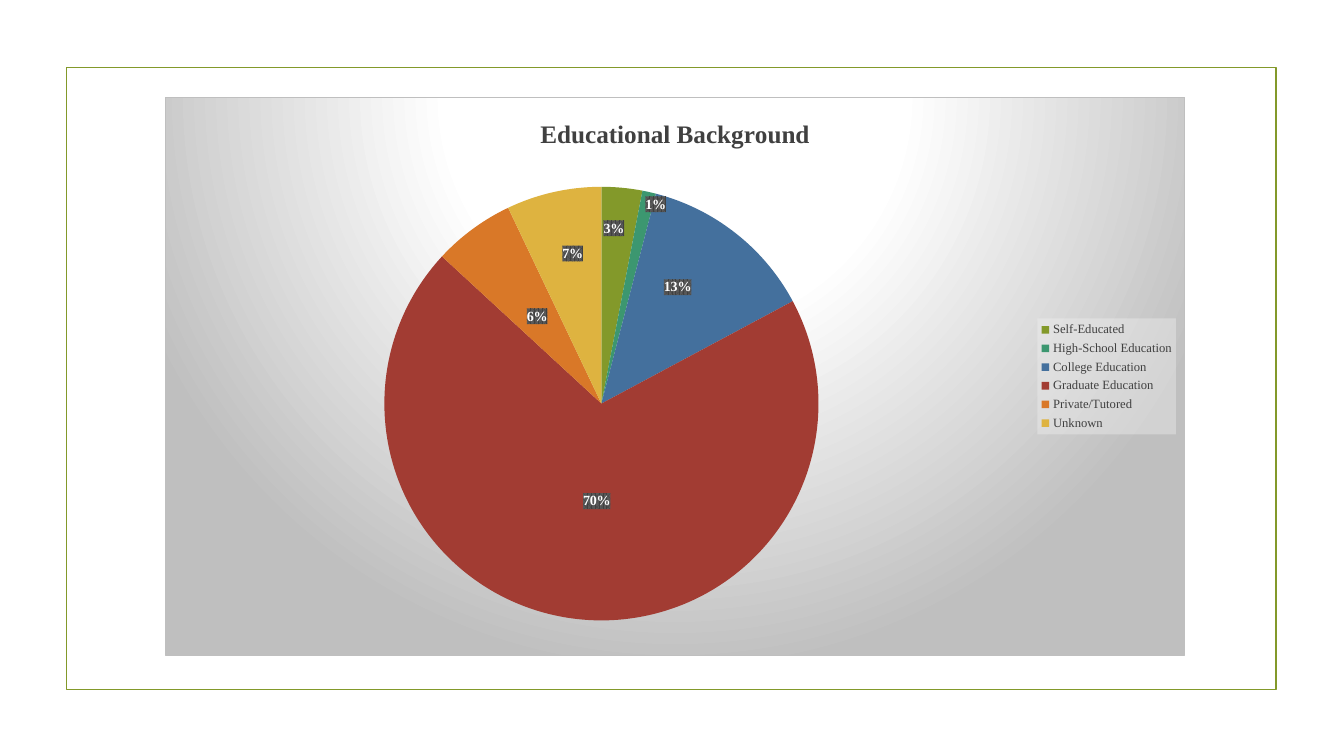
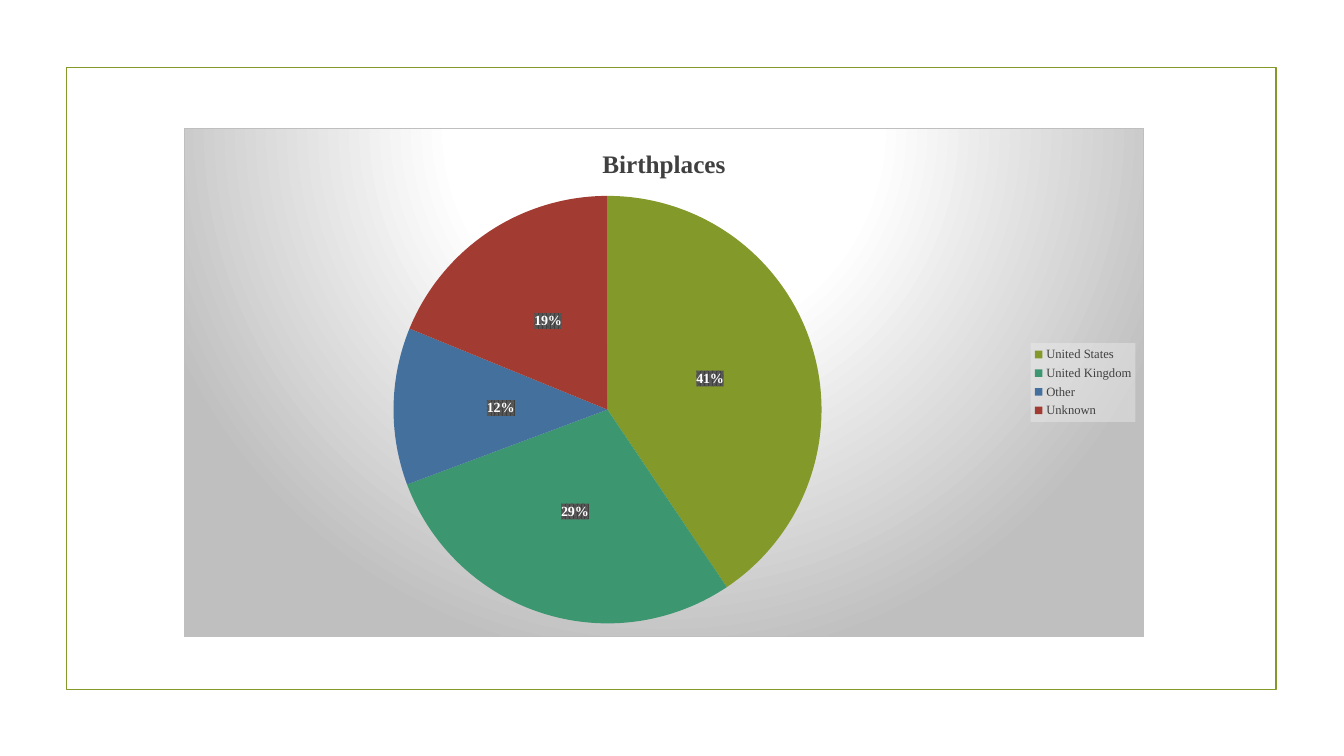
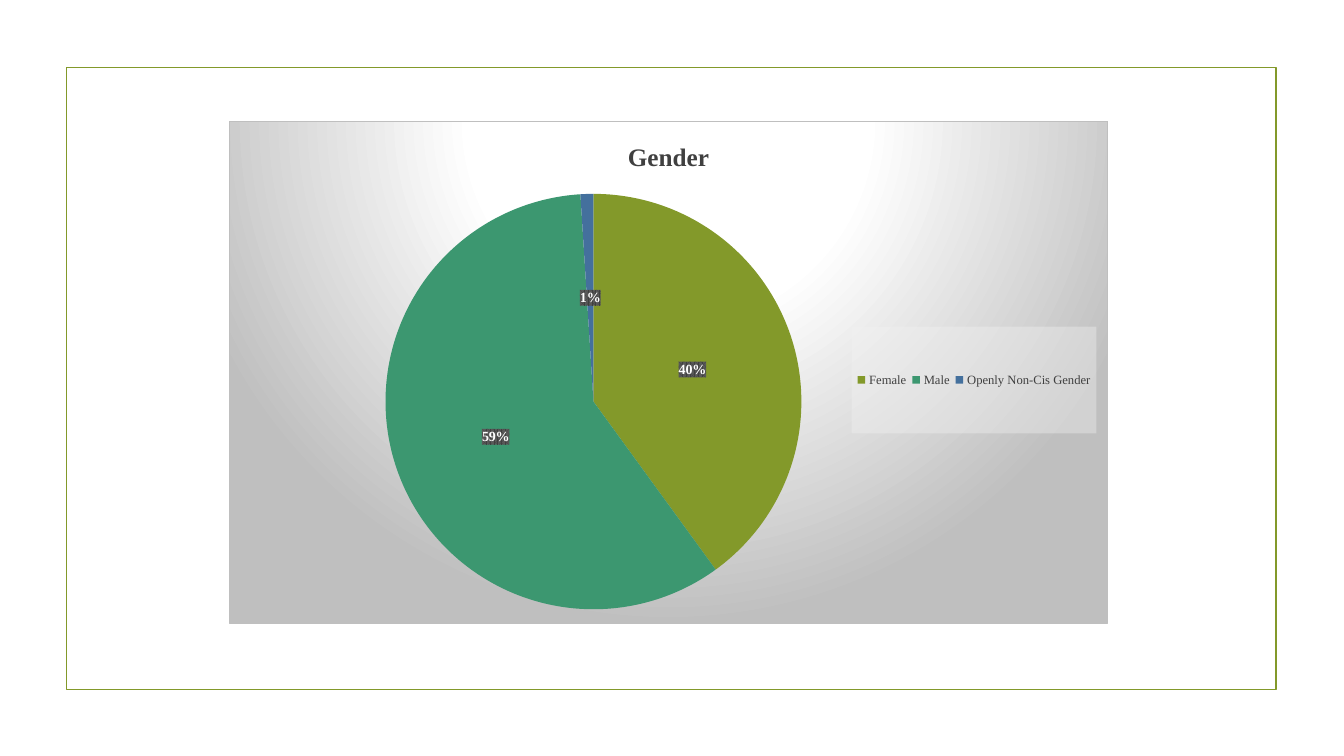
"""Build three framed slides with demographic pie charts."""
from copy import deepcopy
from dataclasses import dataclass, field

from pptx import Presentation
from pptx import util as u
from pptx.chart.chart import Chart
from pptx.chart.data import CategoryChartData
from pptx.dml.color import RGBColor
from pptx.enum import chart as charts
from pptx.enum import shapes
from pptx.oxml import parse_xml
from pptx.oxml.ns import nsdecls, qn
from pptx.slide import Slide, SlideLayout
from pptx.text.text import Font

FONT = "Times New Roman"
DARK = "404040"
WHITE = "FFFFFF"
SILVER = "BFBFBF"
PALETTE = ["83992A", "3C9770", "44709D", "A23C33", "D97828", "DEB340"]

CHART_STYLE = f"""
<a:gradFill rotWithShape="1"><a:gsLst>
<a:gs pos="0"><a:srgbClr val="{WHITE}"/></a:gs>
<a:gs pos="39000"><a:srgbClr val="{WHITE}"/></a:gs>
<a:gs pos="100000"><a:srgbClr val="{SILVER}"/></a:gs>
</a:gsLst><a:path path="circle">
<a:fillToRect l="50000" t="-80000" r="50000" b="180000"/>
</a:path></a:gradFill>
<a:ln w="9525"><a:solidFill><a:srgbClr val="{SILVER}"/></a:solidFill></a:ln>"""
LEGEND_STYLE = """
<a:solidFill><a:srgbClr val="F2F2F2"><a:alpha val="39000"/></a:srgbClr></a:solidFill>
<a:ln><a:noFill/></a:ln>"""
LABEL_STYLE = f"""
<a:pattFill prst="pct75"><a:fgClr><a:srgbClr val="{DARK}"/></a:fgClr>
<a:bgClr><a:srgbClr val="595959"/></a:bgClr></a:pattFill>
<a:ln><a:noFill/></a:ln>"""


@dataclass
class Area:
    """A rectangle on the slide, in inches."""

    left: float
    top: float
    width: float
    height: float

    def within(self, outer: "Area") -> dict[str, float]:
        """Return this area as fractions of an outer one."""
        return {
            "x": (self.left - outer.left) / outer.width,
            "y": (self.top - outer.top) / outer.height,
            "w": self.width / outer.width,
            "h": self.height / outer.height,
        }


@dataclass
class PieSlide:
    """One pie chart with its data and placement."""

    title: str
    area: Area
    pie: Area
    shares: dict[str, int]
    legend: Area | None = None
    label_shifts: dict[int, tuple[float, float]] = field(default_factory=dict)


FRAME = Area(0.66, 0.67, 12, 6.17)
PIES = [
    PieSlide(
        "Educational Background",
        Area(1.64, 0.96, 10.11, 5.55),
        Area(3.81, 1.85, 4.31, 4.31),
        {
            "Self-Educated": 3,
            "High-School Education": 1,
            "College Education": 13,
            "Graduate Education": 69,
            "Private/Tutored": 6,
            "Unknown": 7,
        },
        label_shifts={
            0: (0.02, -0.67),
            1: (0.3, -0.93),
            2: (0.09, -0.31),
            3: (0.09, -0.1),
            5: (-0.05, -0.44),
        },
    ),
    PieSlide(
        "Birthplaces",
        Area(1.82, 1.27, 9.53, 5.05),
        Area(3.9, 1.94, 4.25, 4.25),
        {"United States": 41, "United Kingdom": 29, "Other": 12, "Unknown": 19},
    ),
    PieSlide(
        "Gender",
        Area(2.27, 1.2, 8.72, 4.99),
        Area(3.82, 1.92, 4.13, 4.13),
        {"Female": 40, "Male": 59, "Openly Non-Cis Gender": 1},
        legend=Area(8.45, 3.24, 2.43, 1.06),
    ),
]


def color(value: str) -> RGBColor:
    """Turn a hex string into a colour."""
    return RGBColor.from_string(value)


def set_font(font: Font, size: float, value: str, bold: bool = False) -> None:
    """Apply the deck's typeface with a size, colour and weight."""
    font.name = FONT
    font.size = u.Pt(size)
    font.bold = bold
    font.color.rgb = color(value)


def style_element(content: str):
    """Wrap fill and line markup as chart shape properties."""
    return parse_xml(f"<c:spPr {nsdecls('c', 'a')}>{content}</c:spPr>")


def layout_element(values: dict[str, float], modes: str = ""):
    """Make a manual chart layout from fractions."""
    numbers = "".join(f'<c:{key} val="{value:.4f}"/>' for key, value in values.items())
    return parse_xml(
        f"<c:layout {nsdecls('c')}><c:manualLayout>{modes}{numbers}"
        "</c:manualLayout></c:layout>"
    )


def set_layout(parent, position: int, area: Area, outer: Area, inner: bool = False) -> None:
    """Fix the place of a chart part inside the chart area."""
    for old in parent.findall(qn("c:layout")):
        parent.remove(old)
    modes = '<c:layoutTarget val="inner"/>' if inner else ""
    modes += '<c:xMode val="edge"/><c:yMode val="edge"/>'
    parent.insert(position, layout_element(area.within(outer), modes))


def add_labels(chart: Chart, pie: PieSlide) -> None:
    """Show percentages, moving the labels that need a shift."""
    labels = chart.plots[0].series[0].data_labels
    labels.show_value = False
    labels.show_percentage = True
    labels.number_format = "0%"
    labels.number_format_is_linked = False
    labels.position = charts.XL_LABEL_POSITION.CENTER
    set_font(labels.font, 10, WHITE, bold=True)
    root = labels.font and chart.plots[0].series[0].data_labels._element
    root.find(qn("c:txPr")).addprevious(style_element(LABEL_STYLE))
    leader = root.find(qn("c:showLeaderLines"))
    if leader is not None:
        leader.set("val", "0")
    shared = [part for part in root if part is not leader]
    for position, (index, (right, down)) in enumerate(pie.label_shifts.items()):
        label = parse_xml(f'<c:dLbl {nsdecls("c")}><c:idx val="{index}"/></c:dLbl>')
        shift = {"x": right / pie.area.width, "y": down / pie.area.height}
        label.append(layout_element(shift))
        label.extend(deepcopy(part) for part in shared)
        root.insert(position, label)


def add_legend(chart: Chart, pie: PieSlide) -> None:
    """Add the translucent legend on the right."""
    chart.has_legend = True
    legend = chart.legend
    legend.position = charts.XL_LEGEND_POSITION.RIGHT
    legend.include_in_layout = False
    set_font(legend.font, 9, DARK)
    root = legend._element
    root.find(qn("c:txPr")).addprevious(style_element(LEGEND_STYLE))
    if pie.legend:
        set_layout(root, 1, pie.legend, pie.area)


def add_pie(page: Slide, pie: PieSlide) -> None:
    """Draw one titled pie chart."""
    data = CategoryChartData()
    data.categories = list(pie.shares)
    data.add_series("Series 1", list(pie.shares.values()))
    area = pie.area
    chart = page.shapes.add_chart(
        charts.XL_CHART_TYPE.PIE,
        u.Inches(area.left),
        u.Inches(area.top),
        u.Inches(area.width),
        u.Inches(area.height),
        data,
    ).chart
    set_font(chart.font, 10, "000000")
    chart.has_title = True
    title = chart.chart_title.text_frame
    title.text = pie.title
    set_font(title.paragraphs[0].font, 18, DARK, bold=True)

    plot = chart.plots[0]
    plot.vary_by_categories = True
    for index, value in enumerate(PALETTE[: len(pie.shares)]):
        fill = plot.series[0].points[index].format.fill
        fill.solid()
        fill.fore_color.rgb = color(value)
    add_labels(chart, pie)
    add_legend(chart, pie)

    root = chart.element.find(qn("c:chart"))
    root.addnext(style_element(CHART_STYLE))
    set_layout(root.find(qn("c:plotArea")), 0, pie.pie, area, inner=True)


def add_frame(page: Slide, layout: SlideLayout) -> None:
    """Draw the green frame and hand it to the shared layout."""
    frame = page.shapes.add_shape(
        shapes.MSO_SHAPE.RECTANGLE,
        u.Inches(FRAME.left),
        u.Inches(FRAME.top),
        u.Inches(FRAME.width),
        u.Inches(FRAME.height),
    )
    frame.shadow.inherit = False
    frame.fill.background()
    frame.line.color.rgb = color(PALETTE[0])
    frame.line.width = u.Pt(1.25)
    layout.shapes.element.append(frame.element)


def main() -> None:
    """Build and save the deck."""
    deck = Presentation()
    deck.slide_width = u.Inches(13.33)
    deck.slide_height = u.Inches(7.5)
    blank = deck.slide_layouts[6]
    pages = [deck.slides.add_slide(blank) for _ in PIES]
    add_frame(pages[0], blank)
    for page, pie in zip(pages, PIES):
        add_pie(page, pie)
    deck.save("out.pptx")


if __name__ == "__main__":
    main()
